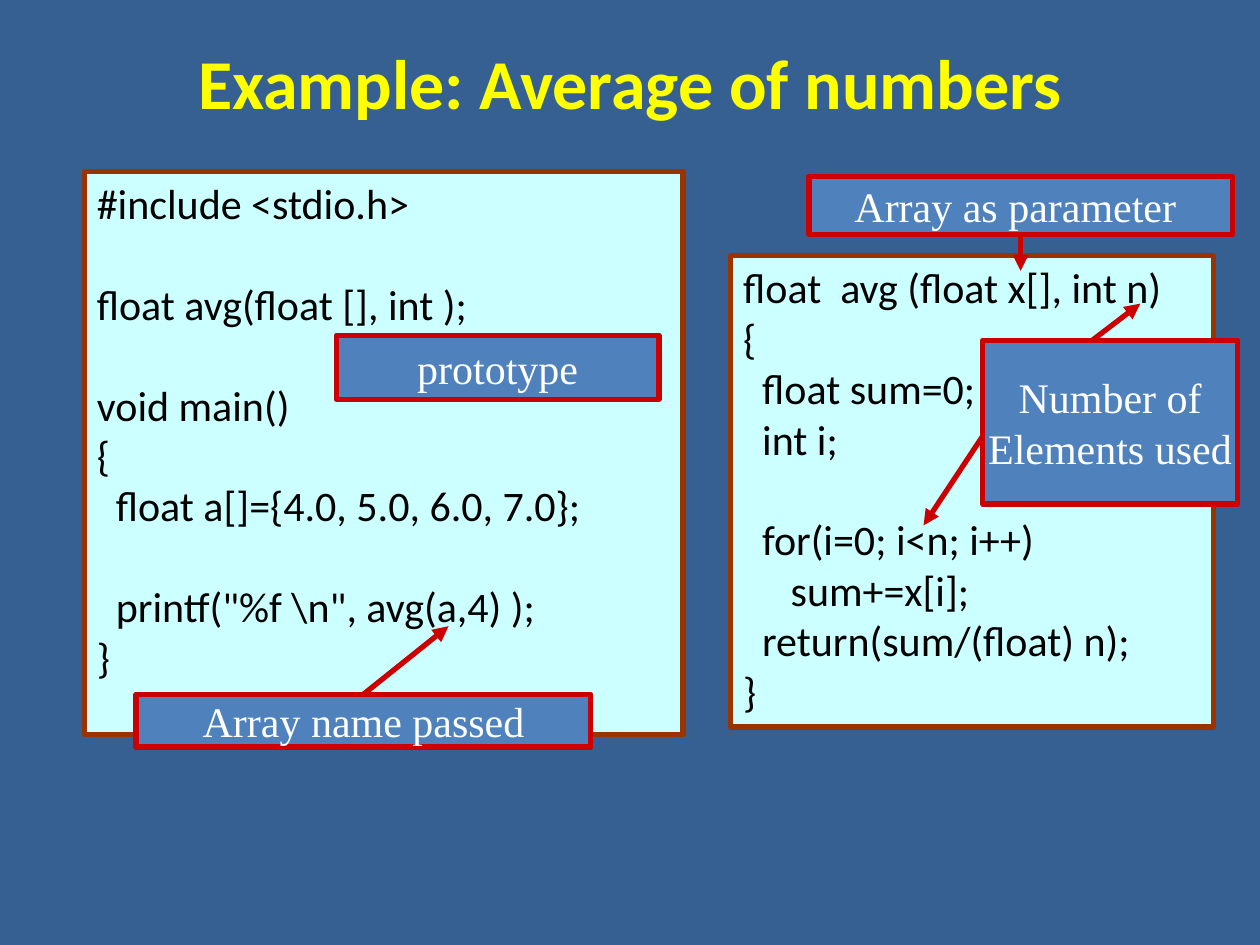
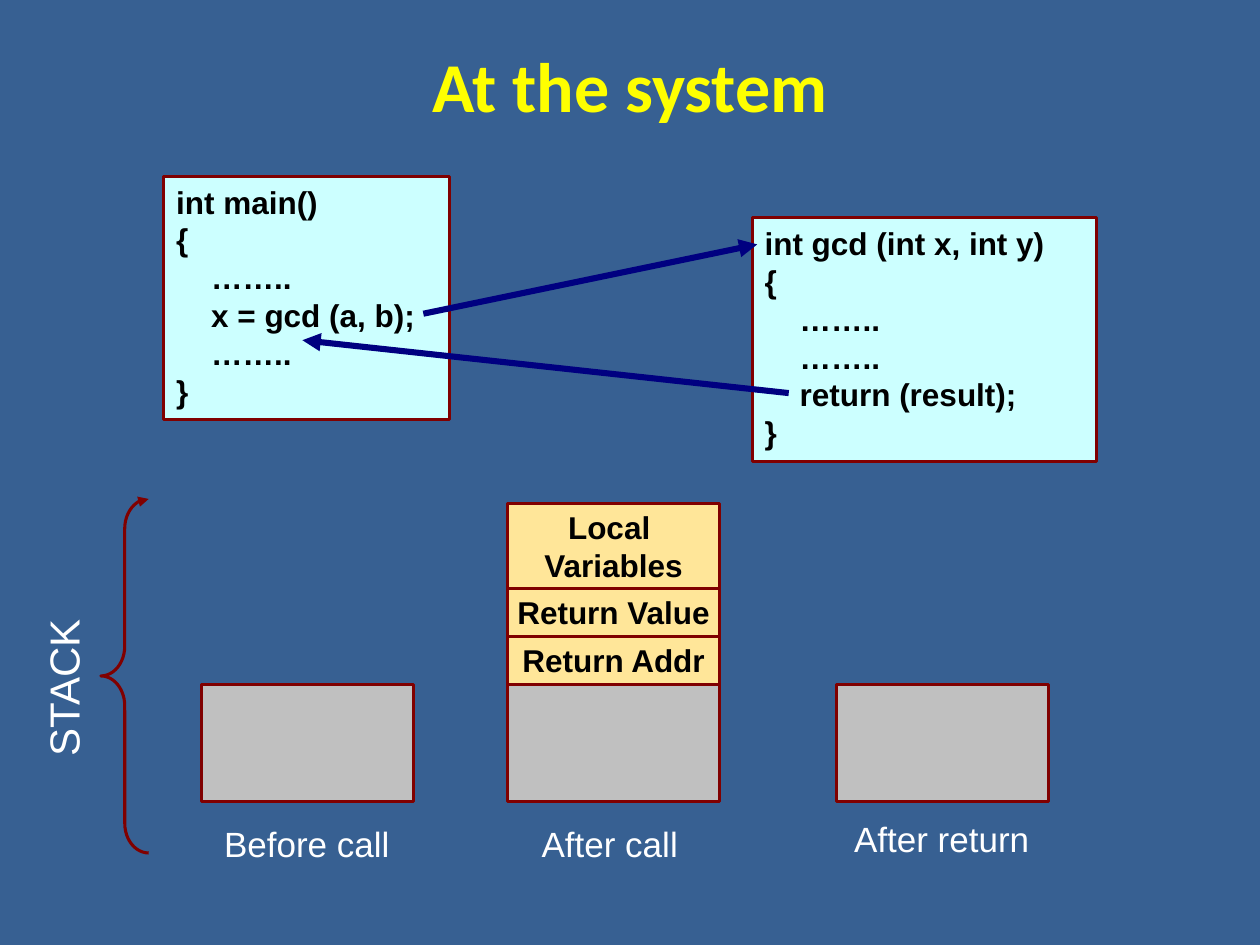
from dataclasses import dataclass
from typing import NamedTuple, Optional

from lxml.etree import SubElement
from pptx import Presentation
from pptx.dml.color import RGBColor
from pptx.enum.shapes import MSO_CONNECTOR as Connector, MSO_SHAPE as Preset
from pptx.enum.text import MSO_ANCHOR as Anchor, PP_ALIGN as Align
from pptx.oxml.ns import qn
from pptx.util import Emu, Inches, Pt

SLIDE_WIDTH, SLIDE_HEIGHT = Inches(10), Inches(7.5)
COLUMNS, ROWS = 100, 75

BACKGROUND = RGBColor(0x37, 0x60, 0x92)
YELLOW = RGBColor(0xFF, 0xFF, 0x00)
WHITE = RGBColor(0xFF, 0xFF, 0xFF)
BLACK = RGBColor(0x00, 0x00, 0x00)
PALE_CYAN = RGBColor(0xCC, 0xFF, 0xFF)
BROWN = RGBColor(0x99, 0x33, 0x00)
CALLOUT_BLUE = RGBColor(0x4F, 0x81, 0xBD)
RED = RGBColor(0xCC, 0x00, 0x00)
MAROON = RGBColor(0x80, 0x00, 0x00)
NAVY = RGBColor(0x00, 0x00, 0x80)
GREY = RGBColor(0xC0, 0xC0, 0xC0)
SAND = RGBColor(0xFF, 0xE6, 0x99)


class Area(NamedTuple):
    """A rectangle in grid columns and rows."""
    left: float
    top: float
    width: float
    height: float


class Point(NamedTuple):
    column: float
    row: float


class Outline(NamedTuple):
    color: RGBColor
    points: float


@dataclass(frozen=True)
class TextStyle:
    font: str
    size: float
    color: RGBColor
    bold: bool = False
    align: Align = Align.LEFT
    space_width: float = 0.25  # shares of the font size
    line_height: float = 1.2


@dataclass(frozen=True)
class BoxStyle:
    fill: RGBColor
    outline: Outline
    text: TextStyle
    anchor: Anchor = Anchor.MIDDLE
    wrap: bool = False


@dataclass(frozen=True)
class Arrow:
    start: Point
    end: Point
    outline: Outline


TITLE = TextStyle("Calibri", 40, YELLOW, bold=True, align=Align.CENTER)
CAPTION = TextStyle("Arial", 20, WHITE)
STACK_LABEL = TextStyle("Arial", 24, WHITE)
PROGRAM_TEXT = TextStyle("Calibri", 24, BLACK, space_width=0.226)
CALL_TEXT = TextStyle("Arial", 18, BLACK, bold=True, space_width=0.278)
CALLOUT_TEXT = TextStyle("Times New Roman", 24, WHITE, align=Align.CENTER)
FRAME_TEXT = TextStyle("Arial", 18, BLACK, bold=True, align=Align.CENTER)

RED_LINE, MAROON_LINE, NAVY_LINE = Outline(RED, 3), Outline(MAROON, 1.75), Outline(NAVY, 3.5)
PROGRAM = BoxStyle(PALE_CYAN, Outline(BROWN, 3), PROGRAM_TEXT, Anchor.TOP, wrap=True)
CALL_CODE = BoxStyle(PALE_CYAN, MAROON_LINE, CALL_TEXT, Anchor.TOP, wrap=True)
CALLOUT = BoxStyle(CALLOUT_BLUE, RED_LINE, CALLOUT_TEXT)
CALLER_FRAME = BoxStyle(GREY, MAROON_LINE, FRAME_TEXT)
CALLEE_FRAME = BoxStyle(SAND, MAROON_LINE, FRAME_TEXT)

MAIN_PROGRAM = r"""#include <stdio.h>

float avg(float [], int );

void main()
{
  float a[]={4.0, 5.0, 6.0, 7.0};

  printf("%f \n", avg(a,4) );
}"""

AVG_FUNCTION = """float  avg (float x[], int n)
{
  float sum=0;
  int i;

  for(i=0; i<n; i++)
     sum+=x[i];
  return(sum/(float) n);
}"""

GCD_CALLER = """int main()
{
    ……..
    x = gcd (a, b);
    ……..
}"""

GCD_FUNCTION = """int gcd (int x, int y)
{
    ……..
    ……..
    return (result);
}"""


def across(columns: float) -> Emu:
    return Emu(round(SLIDE_WIDTH * columns / COLUMNS))


def down(rows: float) -> Emu:
    return Emu(round(SLIDE_HEIGHT * rows / ROWS))


def place(area: Area) -> tuple[Emu, Emu, Emu, Emu]:
    return across(area.left), down(area.top), across(area.width), down(area.height)


def write(frame, text: str, style: TextStyle) -> None:
    """Turn leading spaces into indents and empty lines into space before the next line."""
    empty_lines = 0
    paragraph = frame.paragraphs[0]
    for number, line in enumerate(text.split("\n")):
        if not line:
            empty_lines += 1
            continue
        if number:
            paragraph = frame.add_paragraph()
        paragraph.alignment = style.align
        words = line.lstrip(" ")
        spaces = len(line) - len(words)
        if spaces:
            indent = Pt(spaces * style.space_width * style.size)
            paragraph._p.get_or_add_pPr().set("marL", str(indent))
        if empty_lines:
            paragraph.space_before = Pt(empty_lines * style.line_height * style.size)
            empty_lines = 0
        run = paragraph.add_run()
        run.text = words
        run.font.name = style.font
        run.font.size = Pt(style.size)
        run.font.bold = style.bold
        run.font.color.rgb = style.color


def draw_outline(shape, outline: Outline, arrowhead: bool = False) -> None:
    shape.line.color.rgb = outline.color
    shape.line.width = Pt(outline.points)
    if arrowhead:
        line = shape.element.spPr.find(qn("a:ln"))
        SubElement(line, qn("a:tailEnd"), type="triangle")


def add_label(slide, area: Area, text: str, style: TextStyle,
              anchor: Anchor = Anchor.TOP, rotation: float = 0) -> None:
    label = slide.shapes.add_textbox(*place(area))
    label.rotation = rotation
    label.text_frame.word_wrap = True
    label.text_frame.vertical_anchor = anchor
    write(label.text_frame, text, style)


def add_box(slide, area: Area, style: BoxStyle, text: str = ""):
    box = slide.shapes.add_shape(Preset.RECTANGLE, *place(area))
    box.shadow.inherit = False
    box.fill.solid()
    box.fill.fore_color.rgb = style.fill
    draw_outline(box, style.outline)
    if text:
        box.text_frame.word_wrap = style.wrap
        box.text_frame.vertical_anchor = style.anchor
        write(box.text_frame, text, style.text)
    return box


def add_arrow(slide, arrow: Arrow, source=None, side: Optional[int] = None) -> None:
    connector = slide.shapes.add_connector(
        Connector.STRAIGHT,
        across(arrow.start.column), down(arrow.start.row),
        across(arrow.end.column), down(arrow.end.row))
    if source is not None:
        connector.begin_connect(source, side)
    draw_outline(connector, arrow.outline, arrowhead=True)
    SubElement(connector.element.spPr, qn("a:effectLst"))


def add_titled_slide(deck, title: str, title_height: float):
    slide = deck.slides.add_slide(deck.slide_layouts[6])
    slide.background.fill.solid()
    slide.background.fill.fore_color.rgb = BACKGROUND
    add_label(slide, Area(5, 1.7, 90, title_height), title, TITLE, Anchor.MIDDLE)
    return slide


def build_average_slide(deck) -> None:
    slide = add_titled_slide(deck, "Example: Average of numbers", 9.5)
    add_box(slide, Area(6.7, 13.6, 47.5, 44.7), PROGRAM, MAIN_PROGRAM)
    add_box(slide, Area(58, 20.3, 38.3, 37.4), PROGRAM, AVG_FUNCTION)
    add_box(slide, Area(26.7, 26.6, 25.6, 5.1), CALLOUT, "prototype")

    name_passed = add_box(slide, Area(10.8, 55.1, 36.1, 4.2), CALLOUT, "Array name passed")
    add_arrow(slide, Arrow(Point(28.5, 54.7), Point(35.6, 49.7), RED_LINE), name_passed, 0)

    parameter = add_box(slide, Area(64.2, 14, 33.6, 4.6), CALLOUT, "Array as parameter ")
    add_arrow(slide, Arrow(Point(81, 19), Point(81, 21.5), RED_LINE), parameter, 2)

    add_box(slide, Area(78, 27, 20.2, 13), CALLOUT, "Number of\nElements used")
    add_arrow(slide, Arrow(Point(86.7, 27), Point(90.5, 24.1), RED_LINE))
    add_arrow(slide, Arrow(Point(78, 34.6), Point(73.3, 41.7), RED_LINE))


def build_stack_slide(deck) -> None:
    slide = add_titled_slide(deck, "At the system", 10)
    add_box(slide, Area(13, 14, 22.7, 19.3), CALL_CODE, GCD_CALLER)
    add_box(slide, Area(59.7, 17.3, 27.3, 19.3), CALL_CODE, GCD_FUNCTION)

    frame_width, base_top, base_height = 16.8, 54.3, 9.3
    before_left, during_left, after_left = 16, 40.3, 66.4
    for left in (before_left, during_left, after_left):
        add_box(slide, Area(left, base_top, frame_width, base_height), CALLER_FRAME)

    frame_top = base_top
    for content, height in (("Return Addr", 3.8), ("Return Value", 3.8),
                            ("Local \nVariables", 6.7)):
        frame_top -= height
        add_box(slide, Area(during_left, frame_top, frame_width, height), CALLEE_FRAME, content)

    for moment, spot in (("Before call", Point(16.8, 64.8)),
                         ("After call", Point(42, 64.8)),
                         ("After return", Point(66.8, 64.4))):
        add_label(slide, Area(spot.column, spot.row, 20.6, 4.3), moment, CAPTION)

    brace = slide.shapes.add_shape(Preset.LEFT_BRACE, *place(Area(8, 39.6, 3.8, 28.1)))
    brace.shadow.inherit = False
    brace.fill.background()
    brace.adjustments[0] = 0.62
    draw_outline(brace, MAROON_LINE, arrowhead=True)
    add_label(slide, Area(-7.4, 46.1, 24.8, 5), "STACK", STACK_LABEL, rotation=270)

    add_arrow(slide, Arrow(Point(33.6, 24.9), Point(60.1, 19.4), NAVY_LINE))
    add_arrow(slide, Arrow(Point(62.6, 31.2), Point(24, 27), NAVY_LINE))


def main() -> None:
    deck = Presentation()
    deck.slide_width, deck.slide_height = SLIDE_WIDTH, SLIDE_HEIGHT
    build_average_slide(deck)
    build_stack_slide(deck)
    deck.save("out.pptx")


if __name__ == "__main__":
    main()
